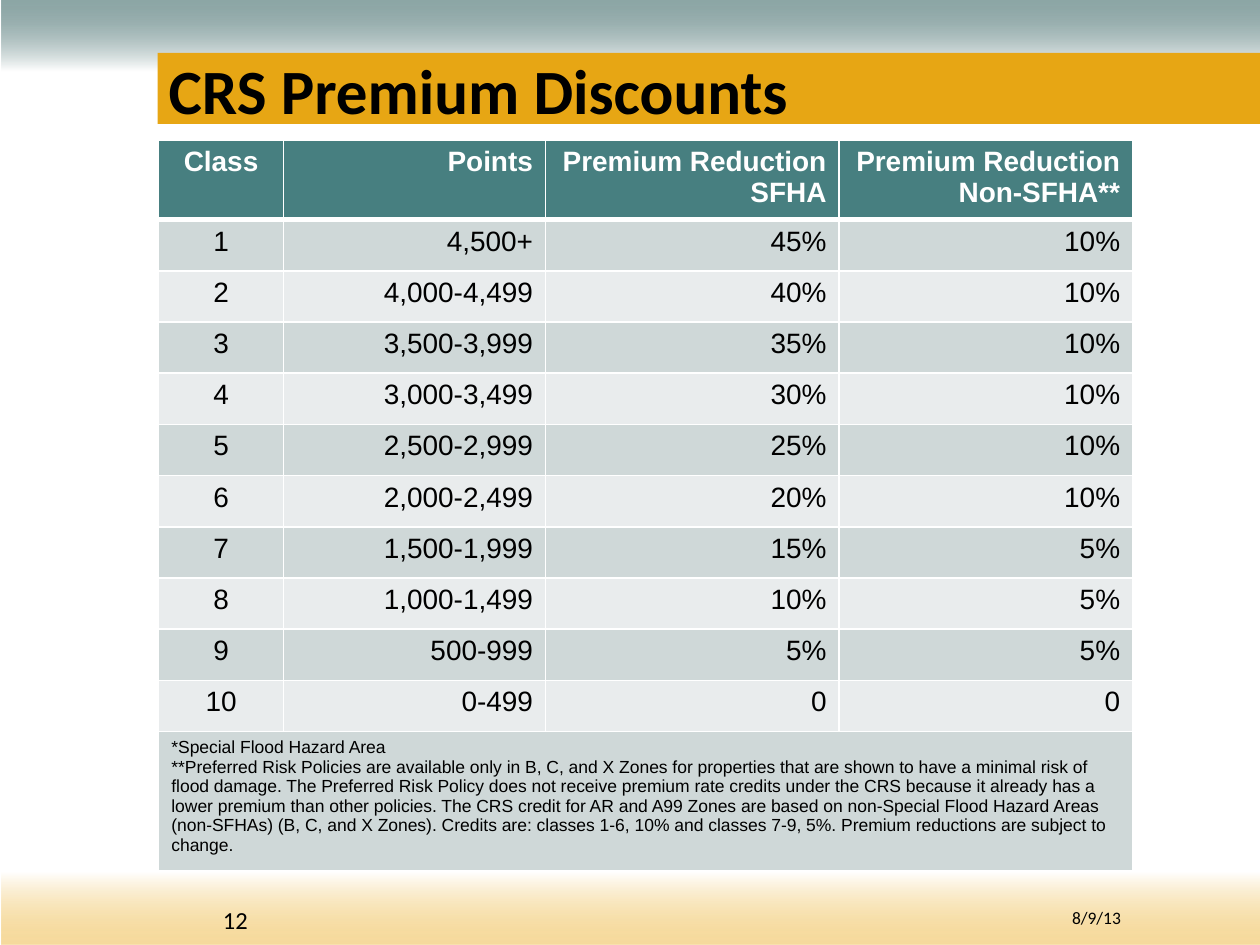
from dataclasses import dataclass

from lxml import etree
from pptx import Presentation
from pptx import util as u
from pptx.dml.color import RGBColor
from pptx.enum import shapes, text
from pptx.oxml.ns import qn


@dataclass(frozen=True)
class Theme:
    teal: str = "215352"
    sand: str = "EEB840"
    gold: str = "E7A614"
    header: str = "477F80"
    bands: tuple = ("CFD8D8", "E9ECED")
    white: str = "FFFFFF"
    ink: str = "000000"
    heading_font: str = "Calibri"
    table_font: str = "Arial"
    title: int = 36
    body: int = 16
    number: int = 14
    small: int = 10


T = Theme()
W, H = u.Inches(10), u.Inches(7.5)
LEFT, CENTER, RIGHT = text.PP_ALIGN.LEFT, text.PP_ALIGN.CENTER, text.PP_ALIGN.RIGHT

HEADINGS = ("Class", "Points", "Premium Reduction SFHA", "Premium Reduction\nNon-SFHA**")
DISCOUNTS = (
    ("4,500+", "45%", "10%"),
    ("4,000-4,499", "40%", "10%"),
    ("3,500-3,999", "35%", "10%"),
    ("3,000-3,499", "30%", "10%"),
    ("2,500-2,999", "25%", "10%"),
    ("2,000-2,499", "20%", "10%"),
    ("1,500-1,999", "15%", "5%"),
    ("1,000-1,499", "10%", "5%"),
    ("500-999", "5%", "5%"),
    ("0-499", "0", "0"),
)
FOOTNOTE = (
    "*Special Flood Hazard Area\n"
    "**Preferred Risk Policies are available only in B, C, and X Zones for properties "
    "that are shown to have a minimal risk of flood damage. The Preferred Risk Policy "
    "does not receive premium rate credits under the CRS because it already has a lower "
    "premium than other policies. The CRS credit for AR and A99 Zones are based on "
    "non-Special Flood Hazard Areas (non-SFHAs) (B, C, and X Zones). Credits are: "
    "classes 1-6, 10% and classes 7-9, 5%. Premium reductions are subject to change."
)
COLUMNS = (9.9, 20.8, 23.3, 23.3)
ROWS = (7.8,) + (5.42,) * len(DISCOUNTS) + (13.6,)


def rgb(value):
    return RGBColor.from_string(value)


def across(percent):
    return int(W * percent / 100)


def down(percent):
    return int(H * percent / 100)


def area(x, y, w, h):
    return across(x), down(y), across(w), down(h)


def write(tf, content, size, font, color=T.ink, bold=False, align=LEFT):
    p = tf.paragraphs[0]
    p.text = content
    p.alignment = align
    for r in p.runs:
        r.font.size, r.font.name, r.font.bold = u.Pt(size), font, bold
        r.font.color.rgb = rgb(color)


def add_band(s, box):
    sp = s.shapes.add_shape(shapes.MSO_SHAPE.RECTANGLE, *area(*box))
    sp.shadow.inherit = False
    sp.line.fill.background()
    return sp


def add_solid(s, box, color):
    sp = add_band(s, box)
    sp.fill.solid()
    sp.fill.fore_color.rgb = rgb(color)


def add_fade(s, box, color, angle):
    fill = add_band(s, box).fill
    fill.gradient()
    fill.gradient_angle = angle
    for stop, position, value in zip(fill.gradient_stops, (0, 0.52), (color, T.white)):
        stop.position = position
        stop.color.rgb = rgb(value)
    first = fill._xPr.find(".//" + qn("a:srgbClr"))
    etree.SubElement(first, qn("a:alpha"), val="51000")


def add_label(s, box, content, size, bold=False, anchor=text.MSO_ANCHOR.TOP):
    tf = s.shapes.add_textbox(*area(*box)).text_frame
    tf.word_wrap = True
    tf.vertical_anchor = anchor
    write(tf, content, size, T.heading_font, bold=bold)


def set_borders(cell, top=1, bottom=1):
    tcPr = cell._tc.get_or_add_tcPr()
    for side, width in (("L", 1), ("R", 1), ("T", top), ("B", bottom)):
        ln = etree.SubElement(tcPr, qn("a:ln" + side), w=str(u.Pt(width)))
        solid = etree.SubElement(ln, qn("a:solidFill"))
        etree.SubElement(solid, qn("a:srgbClr"), val=T.white)


def add_discounts(s):
    box = area(12.6, 14.8, sum(COLUMNS), sum(ROWS))
    tbl = s.shapes.add_table(len(ROWS), len(COLUMNS), *box).table
    for col, width in zip(tbl.columns, COLUMNS):
        col.width = across(width)
    for row, height in zip(tbl.rows, ROWS):
        row.height = down(height)
    last = len(ROWS) - 1
    tbl.cell(last, 0).merge(tbl.cell(last, len(COLUMNS) - 1))

    grid = [HEADINGS]
    grid += [(str(n), *values) for n, values in enumerate(DISCOUNTS, 1)]
    grid += [(FOOTNOTE, "", "", "")]
    for i, values in enumerate(grid):
        head, foot = i == 0, i == last
        for j, value in enumerate(values):
            cell = tbl.cell(i, j)
            set_borders(cell, top=3 if i == 1 else 1, bottom=3 if head else 1)
            cell.fill.solid()
            cell.fill.fore_color.rgb = rgb(T.header if head else T.bands[(i - 1) % 2])
            align = LEFT if foot else RIGHT if j else CENTER
            write(cell.text_frame, value, T.small if foot else T.body, T.table_font,
                  T.white if head else T.ink, head, align)


def main():
    prs = Presentation()
    prs.slide_width, prs.slide_height = W, H
    s = prs.slides.add_slide(prs.slide_layouts[6])
    add_fade(s, (0.1, 0, 99.9, 14.5), T.teal, 270)
    add_solid(s, (12.5, 5.6, 87.5, 7.5), T.gold)
    add_fade(s, (0.1, 85.2, 99.9, 14.8), T.sand, 90)
    add_label(s, (16.7, 95.1, 8.5, 4.5), "12", T.number)
    add_label(s, (84.1, 95.3, 8.5, 3.6), "8/9/13", T.small)
    add_label(s, (12.4, 5.6, 87.6, 7.7), "CRS Premium Discounts", T.title, True,
              text.MSO_ANCHOR.MIDDLE)
    add_discounts(s)
    prs.save("out.pptx")


if __name__ == "__main__":
    main()
